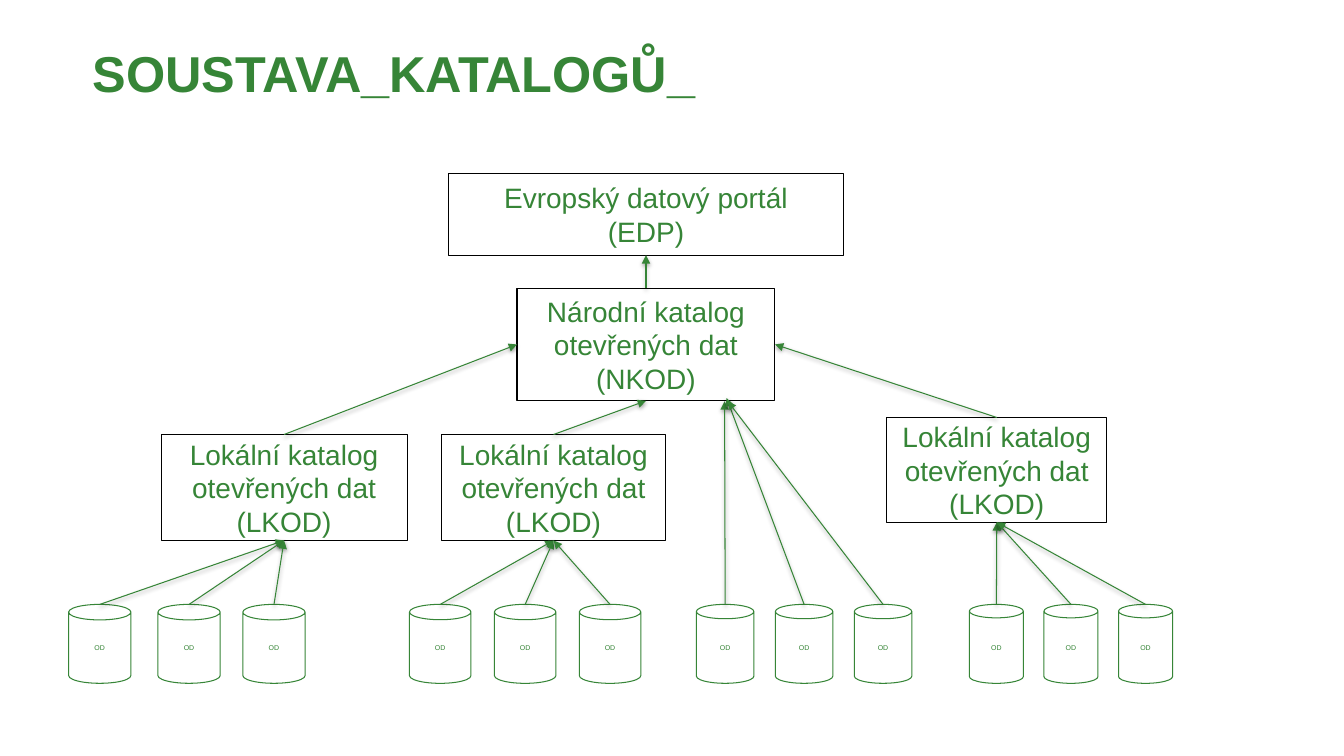
import pptx
import pptx.dml.color
import pptx.enum.shapes
import pptx.enum.text
import pptx.oxml
import pptx.oxml.ns
import pptx.util

Cm, Pt = pptx.util.Cm, pptx.util.Pt
SHAPE = pptx.enum.shapes.MSO_SHAPE
ALIGN = pptx.enum.text.PP_ALIGN
ANCHOR = pptx.enum.text.MSO_ANCHOR
TOP, LEFT, BOTTOM, RIGHT = range(4)

TITLE = "SOUSTAVA_KATALOGŮ_"
LOCAL = "Lokální katalog otevřených dat\v(LKOD)"
# name: (text, left, top, width, height), in cm
CATALOGS = {
    "edp": ("Evropský datový portál\v(EDP)", 11.3, 4.37, 9.96, 2.06),
    "nkod": ("Národní katalog otevřených dat\v(NKOD)", 13.03, 7.26, 6.5, 2.84),
    "local left": (LOCAL, 4.06, 10.95, 6.2, 2.67),
    "local middle": (LOCAL, 11.13, 10.95, 5.64, 2.67),
    "local right": (LOCAL, 22.35, 10.52, 5.54, 2.64),
}
# (from, to, side reached)
CATALOG_LINKS = [
    ("local left", "nkod", LEFT),
    ("local middle", "nkod", BOTTOM),
    ("local right", "nkod", RIGHT),
    ("nkod", "edp", BOTTOM),
]
DATASET = "OD"
DATASET_TOP, DATASET_HEIGHT = 15.23, 1.99
# (left edges, width, local catalog or free arrow ends), in cm
DATASET_GROUPS = [
    ((1.73, 3.98, 6.12), 1.57, "local left"),
    ([10.37 - 0.05 + 2.14 * i for i in range(3)], 1.55, "local middle"),
    ([17.55 + 1.99 * i for i in range(3)], 1.45,
     ((18.26, 10.11), (18.31, 10.03), (18.34, 10.11))),
    ([24.43 + 1.88 * i for i in range(3)], 1.36, "local right"),
]

THEME = {
    "font": "Arial",
    "green": pptx.dml.color.RGBColor.from_string("368537"),
    "black": pptx.dml.color.RGBColor.from_string("000000"),
    "white": pptx.dml.color.RGBColor.from_string("FFFFFF"),
    "title": Pt(36),
    "catalog": Pt(20),
    "dataset": Pt(5),
    "line": Pt(0.75),
}
ARROWHEAD = '<a:tailEnd %s type="triangle"/>'
SOFT_SHADOW = (
    '<a:effectLst %s><a:outerShdw blurRad="39370" dist="20320" dir="5400000" '
    'rotWithShape="0"><a:srgbClr val="000000"><a:alpha val="38000"/></a:srgbClr>'
    '</a:outerShdw></a:effectLst>'
)


def write(shape, text, size, frame_format, paragraph_format, bold=False):
    frame = shape.text_frame
    frame.text = text
    for name, value in frame_format.items():
        setattr(frame, name, value)
    paragraph = frame.paragraphs[0]
    for name, value in paragraph_format.items():
        setattr(paragraph, name, value)
    for run in paragraph.runs:
        font_format = {"name": THEME["font"], "size": THEME[size], "bold": bold}
        for name, value in font_format.items():
            setattr(run.font, name, value)
        run.font.color.rgb = THEME["green"]


def add_node(shapes, kind, box, text, size, line_color):
    shape = shapes.add_shape(kind, *[Cm(length) for length in box])
    shape.shadow.inherit = False
    shape.fill.solid()
    shape.fill.fore_color.rgb = THEME["white"]
    shape.line.color.rgb = THEME[line_color]
    shape.line.width = THEME["line"]
    write(shape, text, size,
          {"word_wrap": True, "vertical_anchor": ANCHOR.MIDDLE},
          {"alignment": ALIGN.CENTER})
    return shape


def add_arrow(slide, start=(0, 0), end=(0, 0)):
    points = [Cm(length) for length in (*start, *end)]
    arrow = slide.shapes.add_connector(
        pptx.enum.shapes.MSO_CONNECTOR.STRAIGHT, *points)
    arrow.line.color.rgb = THEME["green"]
    arrow.line.width = THEME["line"]
    namespace = pptx.oxml.ns.nsdecls("a")
    arrow.line._get_or_add_ln().append(pptx.oxml.parse_xml(ARROWHEAD % namespace))
    arrow._element.spPr.append(pptx.oxml.parse_xml(SOFT_SHADOW % namespace))
    return arrow


def add_title(slide):
    title = slide.shapes.title
    place = {"left": Cm(2.34), "top": Cm(0.84), "width": Cm(29.21), "height": Cm(3.68)}
    for name, value in place.items():
        setattr(title, name, value)
    margins = dict.fromkeys(
        ("margin_left", "margin_top", "margin_right", "margin_bottom"), 0)
    write(title, TITLE, "title",
          {"word_wrap": True, "vertical_anchor": ANCHOR.TOP, **margins},
          {"alignment": ALIGN.LEFT, "line_spacing": 1.15}, bold=True)


def add_datasets(slide, catalogs):
    for lefts, width, target in DATASET_GROUPS:
        group = slide.shapes.add_group_shape()
        for index, left in enumerate(lefts):
            add_node(group.shapes, SHAPE.CAN,
                     (left, DATASET_TOP, width, DATASET_HEIGHT),
                     DATASET, "dataset", "green")
            start = (left + width / 2, DATASET_TOP)
            if target in catalogs:
                add_arrow(slide, start).end_connect(catalogs[target], BOTTOM)
            else:
                add_arrow(slide, start, target[index])


def main():
    presentation = pptx.Presentation()
    presentation.slide_width, presentation.slide_height = Cm(33.87), Cm(19.05)
    slide = presentation.slides.add_slide(presentation.slide_layouts[5])
    add_title(slide)
    catalogs = {
        name: add_node(slide.shapes, SHAPE.RECTANGLE, box, text, "catalog", "black")
        for name, (text, *box) in CATALOGS.items()
    }
    for source, target, side in CATALOG_LINKS:
        arrow = add_arrow(slide)
        arrow.begin_connect(catalogs[source], TOP)
        arrow.end_connect(catalogs[target], side)
    add_datasets(slide, catalogs)
    presentation.save("out.pptx")


if __name__ == "__main__":
    main()
